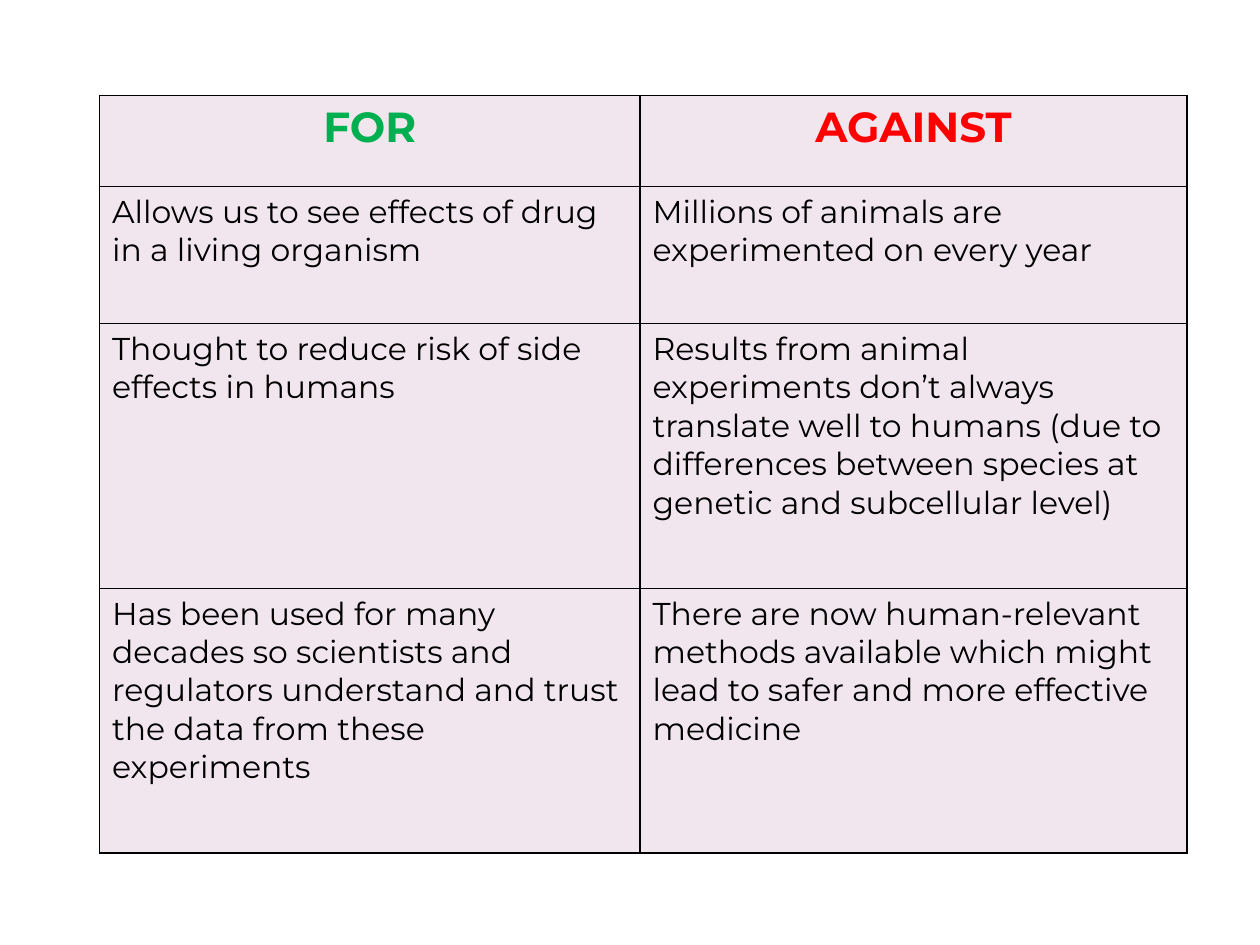
import pptx
import pptx.dml.color
import pptx.enum.text
import pptx.oxml
import pptx.oxml.ns
import pptx.util
from pptx.util import Inches

RGBColor = pptx.dml.color.RGBColor
BLACK = RGBColor(0x00, 0x00, 0x00)
GREEN = RGBColor(0x00, 0xB0, 0x50)
RED = RGBColor(0xFF, 0x00, 0x00)
PALE_PINK = RGBColor(0xF2, 0xE6, 0xEE)

FONT = "Montserrat"
LEFT_ALIGN = pptx.enum.text.PP_ALIGN.LEFT
CENTER = pptx.enum.text.PP_ALIGN.CENTER

HEADINGS = [("FOR", GREEN), ("AGAINST", RED)]
ARGUMENTS = [
    ("Allows us to see effects of drug in a living organism",
     "Millions of animals are experimented on every year"),
    ("Thought to reduce risk of side effects in humans",
     "Results from animal experiments don’t always translate well to humans "
     "(due to differences between species at genetic and subcellular level)"),
    ("Has been used for many decades so scientists and regulators understand "
     "and trust the data from these experiments",
     "There are now human-relevant methods available which might lead to "
     "safer and more effective medicine"),
]
COLUMN_WIDTHS = [Inches(4.29), Inches(4.34)]
ROW_HEIGHTS = [Inches(0.72), Inches(1.09), Inches(2.1), Inches(2.1)]


def write_text(frame, text, size=18, color=BLACK, bold=False, align=LEFT_ALIGN):
    paragraph = frame.paragraphs[0]
    paragraph.alignment = align
    run = paragraph.add_run()
    run.text = text
    run.font.name = FONT
    run.font.size = pptx.util.Pt(size)
    run.font.bold = bold
    run.font.color.rgb = color


def style_cell(cell, fill=PALE_PINK, border=BLACK, border_width=1):
    # Borders come before the fill in the cell properties
    properties = cell._tc.get_or_add_tcPr()
    for side in ("lnL", "lnR", "lnT", "lnB"):
        properties.append(pptx.oxml.parse_xml(
            f'<a:{side} {pptx.oxml.ns.nsdecls("a")} w="{pptx.util.Pt(border_width)}">'
            f'<a:solidFill><a:srgbClr val="{border}"/></a:solidFill></a:{side}>'))
    cell.fill.solid()
    cell.fill.fore_color.rgb = fill


def add_arguments_table(slide, left, top, width, height):
    table = slide.shapes.add_table(
        len(ROW_HEIGHTS), len(COLUMN_WIDTHS), left, top, width, height).table
    for column, column_width in zip(table.columns, COLUMN_WIDTHS):
        column.width = column_width
    for row, row_height in zip(table.rows, ROW_HEIGHTS):
        row.height = row_height
    for cell in table.iter_cells():
        style_cell(cell)

    # Heading row
    for column_index, (heading, color) in enumerate(HEADINGS):
        write_text(table.cell(0, column_index).text_frame, heading,
                   size=24, color=color, bold=True, align=CENTER)

    # Paired arguments
    for row_index, pair in enumerate(ARGUMENTS, start=1):
        for column_index, argument in enumerate(pair):
            write_text(table.cell(row_index, column_index).text_frame, argument)


def main():
    presentation = pptx.Presentation()
    presentation.slide_width = Inches(10)
    presentation.slide_height = Inches(7.5)
    slide = presentation.slides.add_slide(presentation.slide_layouts[6])
    add_arguments_table(slide, Inches(0.79), Inches(0.76),
                        sum(COLUMN_WIDTHS), sum(ROW_HEIGHTS))
    presentation.save("out.pptx")


if __name__ == "__main__":
    main()
